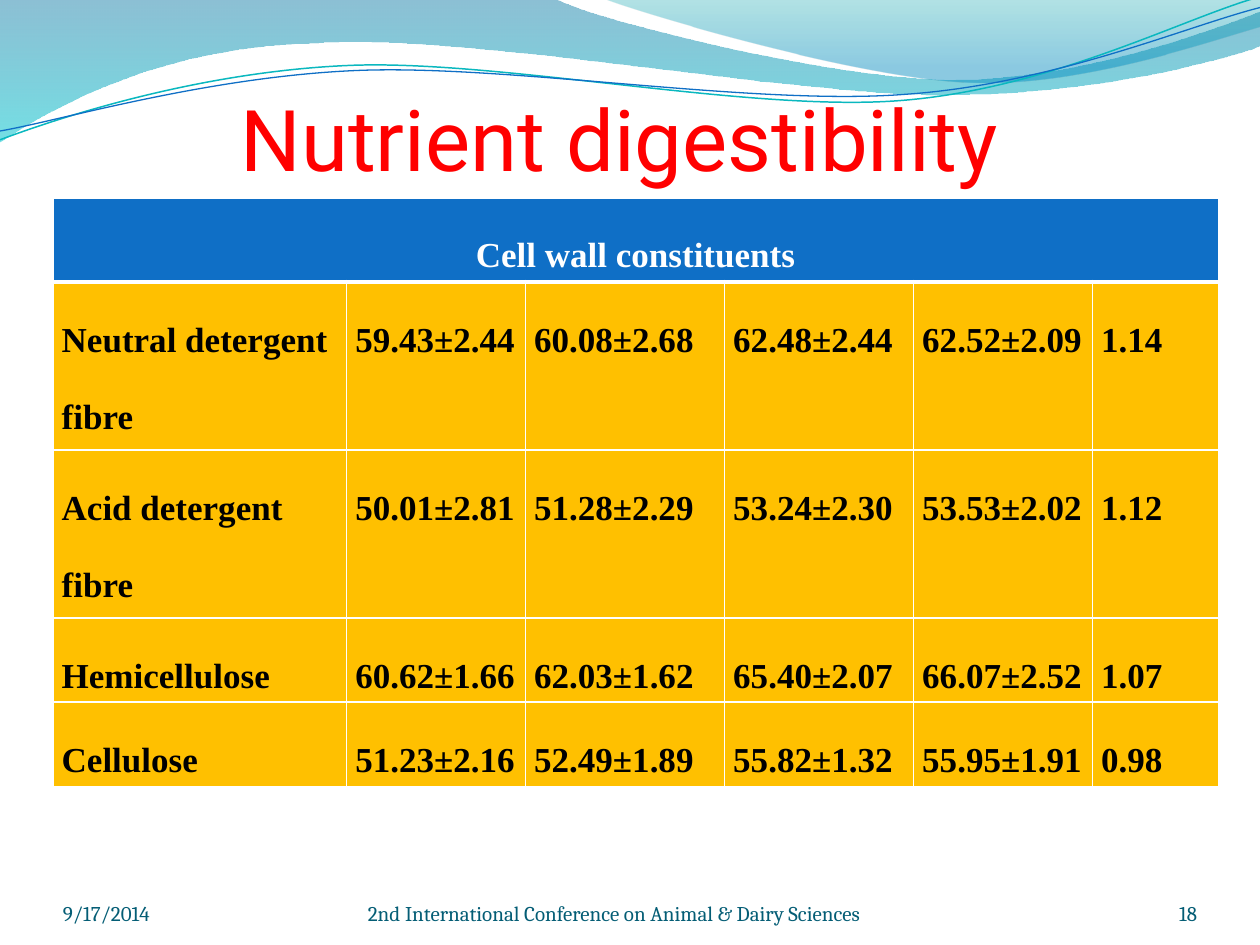
from lxml import etree
from pptx import Presentation
from pptx.dml.color import RGBColor
from pptx.enum.text import MSO_ANCHOR, PP_ALIGN
from pptx.oxml.ns import qn
from pptx.util import Inches, Pt

LEFT, CENTER, RIGHT = PP_ALIGN.LEFT, PP_ALIGN.CENTER, PP_ALIGN.RIGHT
BOTTOM = MSO_ANCHOR.BOTTOM
WHITE = RGBColor(0xFF, 0xFF, 0xFF)
BLACK = RGBColor(0, 0, 0)
RED = RGBColor(0xFF, 0, 0)
BLUE = RGBColor(0x0F, 0x6F, 0xC6)
TEAL = RGBColor(0x0A, 0xB8, 0xBF)
AMBER = RGBColor(0xFF, 0xC0, 0)
FOOTER = RGBColor(0x04, 0x5D, 0x75)
DEEP_BLUE = RGBColor(0, 0x74, 0xA1)
CYAN = RGBColor(0, 0xC6, 0xCF)
SEA = RGBColor(0, 0xA1, 0xA9)
SKY = RGBColor(0, 0x8B, 0xBF)

HEADER = "Cell wall constituents"
ROWS = [
    ("Neutral detergent fibre", "59.43±2.44", "60.08±2.68", "62.48±2.44", "62.52±2.09", "1.14"),
    ("Acid detergent fibre", "50.01±2.81", "51.28±2.29", "53.24±2.30", "53.53±2.02", "1.12"),
    ("Hemicellulose", "60.62±1.66", "62.03±1.62", "65.40±2.07", "66.07±2.52", "1.07"),
    ("Cellulose", "51.23±2.16", "52.49±1.89", "55.82±1.32", "55.95±1.91", "0.98"),
]
COL_WIDTHS = [2.33, 1.42, 1.58, 1.5, 1.42, 1]
ROW_HEIGHTS = [0.61, 1.23, 1.23, 0.61, 0.61]

FOOTERS = [
    ("9/17/2014", 0.5, 2.33, LEFT),
    ("2nd International Conference on Animal & Dairy Sciences", 2.92, 5, LEFT),
    ("18", 8.67, 0.83, RIGHT),
]

BANDS = [
    ([(0, 0), (4.4, -0.01), (4.76, 0.17, 6.64, 0.63, 7.58, 0.63),
      (8.53, 0.63, 9.58, 0.26, 10, 0.09), (10.01, 0.36),
      (9.83, 0.44, 8.7, 0.76, 7.46, 0.75), (6.22, 0.75, 3.82, 0.28, 2.57, 0.34),
      (1.29, 0.36, 0.46, 0.83, -0.01, 1.13), (0, 0)],
     [(0, DEEP_BLUE, 45), (1, CYAN, 55)]),
    ([(4.79, -0.01), (5.09, 0.11, 6.82, 0.62, 7.69, 0.65),
      (8.56, 0.69, 9.61, 0.32, 10, 0.21), (10, 0), (4.79, -0.01)],
     [(0, SEA, 30), (0.8, SKY, 45)]),
]
WAVES = [
    ([(0, 1.11), (0.48, 0.93, 1.58, 0.57, 2.77, 0.52),
      (3.95, 0.47, 5.93, 0.89, 7.13, 0.8), (8.33, 0.71, 9.38, 0.15, 9.98, -0.02)],
     TEAL, 0.85),
    ([(0, 1.04), (0.47, 0.96, 1.64, 0.61, 2.83, 0.56),
      (4.03, 0.51, 5.97, 0.84, 7.17, 0.75), (8.36, 0.67, 9.41, 0.21, 10, 0.06)],
     BLUE, 0.75),
]


def add_path(slide, path, close):
    ends = [(Inches(seg[-2]), Inches(seg[-1])) for seg in path]
    left, top = (min(values) for values in zip(*ends))
    builder = slide.shapes.build_freeform(*ends[0])
    builder.add_line_segments(ends[1:], close=close)
    sp = builder.convert_to_shape()
    sp.shadow.inherit = False
    lines = list(sp._element.spPr.iter(qn("a:lnTo")))
    for line, seg in zip(lines, path[1:]):
        if len(seg) == 6:
            curve = etree.Element(qn("a:cubicBezTo"))
            for x, y in zip(seg[::2], seg[1::2]):
                etree.SubElement(curve, qn("a:pt"), x=str(Inches(x) - left), y=str(Inches(y) - top))
            line.getparent().replace(line, curve)
    return sp


def add_band(slide, path, stops):
    sp = add_path(slide, path, True)
    sp.line.fill.background()
    sp.fill.gradient()
    sp.fill.gradient_angle = 270
    for stop, (pos, color, _) in zip(sp.fill.gradient_stops, stops):
        stop.position = pos
        stop.color.rgb = color
    colors = list(sp._element.spPr.iter(qn("a:srgbClr")))
    for clr, (_, _, opacity) in zip(colors, stops):
        etree.SubElement(clr, qn("a:alpha"), val=str(opacity * 1000))


def add_wave(slide, path, color, width):
    sp = add_path(slide, path, False)
    sp.fill.background()
    sp.line.color.rgb = color
    sp.line.width = Pt(width)


def add_run(p, text, size, font, color, bold=False):
    r = p.add_run()
    r.text = text
    r.font.size = Pt(size)
    r.font.name = font
    r.font.color.rgb = color
    r.font.bold = bold


def add_text(slide, text, box, size, font, color, align, top_inset=0):
    tf = slide.shapes.add_textbox(*map(Inches, box)).text_frame
    tf.word_wrap = True
    tf.vertical_anchor = BOTTOM
    tf.margin_left = tf.margin_right = tf.margin_bottom = 0
    tf.margin_top = Inches(top_inset)
    p = tf.paragraphs[0]
    p.alignment = align
    add_run(p, text, size, font, color)


def set_border(cell, side, width):
    ln = etree.SubElement(cell._tc.get_or_add_tcPr(), qn("a:ln" + side), w=str(Pt(width)))
    fill = etree.SubElement(ln, qn("a:solidFill"))
    etree.SubElement(fill, qn("a:srgbClr"), val=str(WHITE))


def style_cell(cell, fill, top, bottom):
    for side, width in (("L", 1), ("R", 1), ("T", top), ("B", bottom)):
        set_border(cell, side, width)
    cell.fill.solid()
    cell.fill.fore_color.rgb = fill
    cell.margin_left = cell.margin_right = Inches(0.07)
    cell.margin_top = cell.margin_bottom = 0


def fill_cell(cell, text, color, align):
    p = cell.text_frame.paragraphs[0]
    p.alignment = align
    p.line_spacing = 2.0
    add_run(p, text, 20, "Times New Roman", color, True)


def add_nutrient_table(slide):
    n_rows, n_cols = len(ROW_HEIGHTS), len(COL_WIDTHS)
    table = slide.shapes.add_table(n_rows, n_cols, Inches(0.42), Inches(1.57),
                                   Inches(sum(COL_WIDTHS)), Inches(sum(ROW_HEIGHTS))).table
    for col, width in zip(table.columns, COL_WIDTHS):
        col.width = Inches(width)
    for i, (row, height) in enumerate(zip(table.rows, ROW_HEIGHTS)):
        row.height = Inches(height)
        for cell in row.cells:
            style_cell(cell, AMBER if i else BLUE, 3 if i == 1 else 1, 1 if i else 3)
    table.cell(0, 0).merge(table.cell(0, n_cols - 1))
    fill_cell(table.cell(0, 0), HEADER, WHITE, CENTER)
    for i, values in enumerate(ROWS, 1):
        for j, text in enumerate(values):
            fill_cell(table.cell(i, j), text, BLACK, LEFT)


def main():
    prs = Presentation()
    prs.slide_width, prs.slide_height = Inches(10), Inches(7.5)
    s = prs.slides.add_slide(prs.slide_layouts[6])
    for band in BANDS:
        add_band(s, *band)
    for wave in WAVES:
        add_wave(s, *wave)
    add_text(s, "Nutrient digestibility ", (0.5, 0.77, 9, 0.73), 48.6, "Roboto", RED, CENTER, 0.05)
    add_nutrient_table(s)
    for text, left, width, align in FOOTERS:
        add_text(s, text, (left, 6.95, width, 0.4), 12, "Cambria", FOOTER, align)
    prs.save("out.pptx")


if __name__ == "__main__":
    main()
